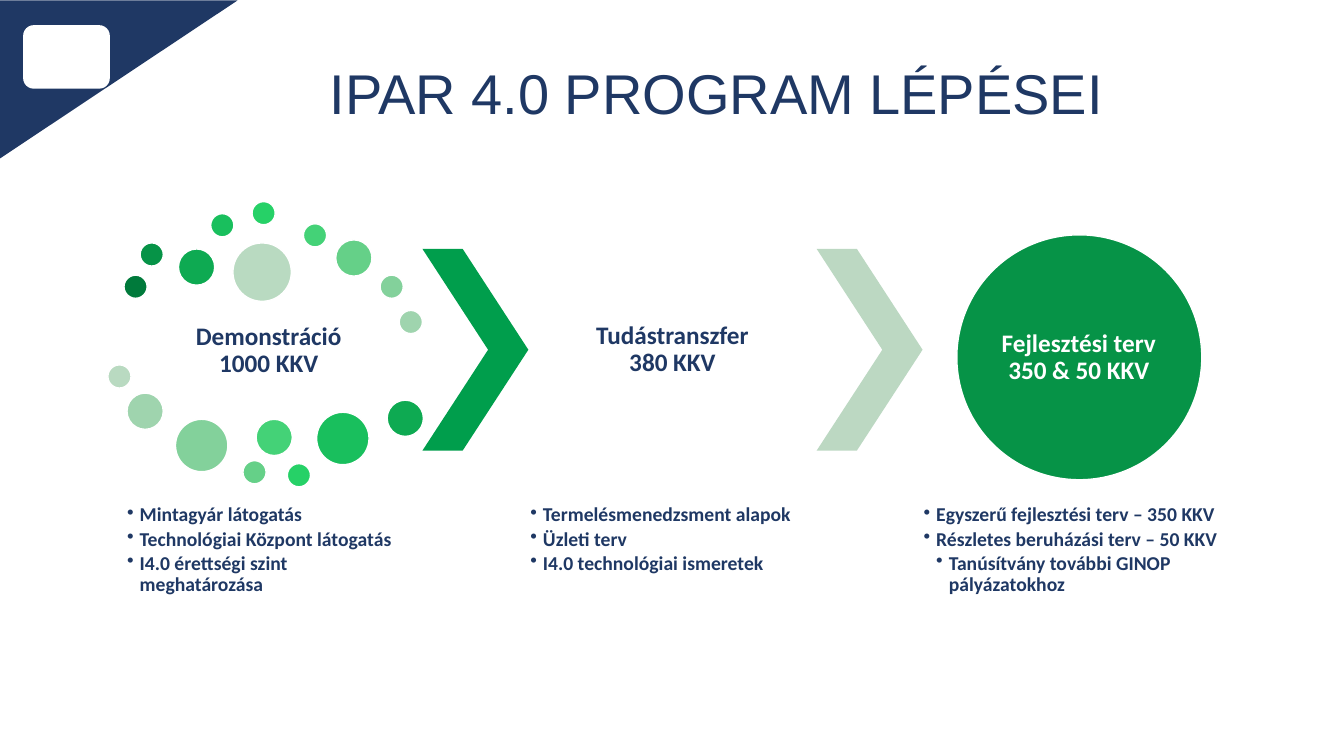
from lxml import etree
from pptx import Presentation
from pptx.dml.color import RGBColor
from pptx.enum.shapes import MSO_SHAPE
from pptx.enum.text import MSO_ANCHOR, PP_ALIGN
from pptx.oxml.ns import qn
from pptx.util import Pt

PX = 9144
WIDE, HIGH = 1333, 750
NAVY = RGBColor(0x1F, 0x38, 0x64)
WHITE = RGBColor(0xFF, 0xFF, 0xFF)
LEAF = RGBColor(0x00, 0x9E, 0x4C)
SAGE = RGBColor(0xBC, 0xD8, 0xC2)
DISC = RGBColor(0x06, 0x93, 0x47)
GREENS = [RGBColor.from_string(code) for code in (
    "007A3B", "069347", "0EAA52", "19BF5D", "26D167",
    "44D277", "65D088", "83D19B", "9FD4AE", "B9DAC1")]

OVAL, CHEVRON = MSO_SHAPE.OVAL, MSO_SHAPE.CHEVRON
CORNER, BADGE = MSO_SHAPE.RIGHT_TRIANGLE, MSO_SHAPE.ROUNDED_RECTANGLE
TOP, MIDDLE = MSO_ANCHOR.TOP, MSO_ANCHOR.MIDDLE
LEFT, CENTER = PP_ALIGN.LEFT, PP_ALIGN.CENTER

TITLE = {"name": "Arial", "size": Pt(40), "bold": False}
HEAD = {"name": "Calibri", "size": Pt(18), "bold": True}
ITEM = {"name": "Calibri", "size": Pt(14), "bold": True}

UPPER = [(123, 273, 23), (139, 241, 23), (177, 247, 36), (209, 212, 23),
         (250, 200, 23), (301, 222, 23), (333, 238, 36), (377, 273, 23),
         (396, 308, 23), (231, 241, 58)]
LOWER = [(107, 362, 23), (126, 390, 36), (174, 416, 52), (241, 457, 23),
         (254, 416, 36), (285, 460, 23), (314, 409, 52), (384, 397, 36)]

LABELS = [
    ((124, 301, 285, 94), "Demonstráció\n1000 KKV", NAVY, 3),
    ((524, 247, 286, 200), "Tudástranszfer\n380 KKV", NAVY, 3),
    ((984, 269, 172, 172), "Fejlesztési terv\n350 & 50 KKV", WHITE, 0),
]
LISTS = [
    (124, 285, [(1, "Mintagyár látogatás"),
                (1, "Technológiai Központ látogatás"),
                (1, "I4.0 érettségi szint meghatározása")]),
    (524, 286, [(1, "Termelésmenedzsment alapok"),
                (1, "Üzleti terv"),
                (1, "I4.0 technológiai ismeretek")]),
    (914, 312, [(1, "Egyszerű fejlesztési terv – 350 KKV"),
                (1, "Részletes beruházási terv – 50 KKV"),
                (2, "Tanúsítvány további GINOP pályázatokhoz")]),
]


class Canvas:
    def __init__(self, slide):
        self.shapes = slide.shapes

    def scale(self, box):
        return [side * PX for side in box]

    def shape(self, kind, box, fill, edge=None, turn=0, bend=None):
        shape = self.shapes.add_shape(kind, *self.scale(box))
        shape.shadow.inherit = False
        shape.rotation = turn
        shape.fill.solid()
        shape.fill.fore_color.rgb = fill
        if edge is None:
            shape.line.fill.background()
        else:
            shape.line.color.rgb = edge
            shape.line.width = Pt(1)
        if bend is not None:
            shape.adjustments[0] = bend

    def dot(self, x, y, size, fill):
        self.shape(OVAL, (x, y, size, size), fill, WHITE)

    def frame(self, box, inset, anchor):
        frame = self.shapes.add_textbox(*self.scale(box)).text_frame
        style = {"word_wrap": True, "vertical_anchor": anchor}
        for side in ("left", "right", "top", "bottom"):
            style[f"margin_{side}"] = inset * PX
        for key, value in style.items():
            setattr(frame, key, value)
        return frame

    def letter(self, para, text, style, color, align):
        para.text = text
        para.alignment = align
        para.line_spacing = 0.9
        for run in para.runs:
            for key, value in style.items():
                setattr(run.font, key, value)
            run.font.color.rgb = color

    def label(self, box, text, style, color, inset):
        frame = self.frame(box, inset, MIDDLE)
        self.letter(frame.paragraphs[0], text, style, color, CENTER)

    def bullets(self, box, items):
        frame = self.frame(box, 2, TOP)
        for index, (level, text) in enumerate(items):
            para = frame.add_paragraph() if index else frame.paragraphs[0]
            para.level = level
            props = para._p.get_or_add_pPr()
            props.set("marL", str(level * 25 * PX // 2))
            props.set("indent", str(-25 * PX // 2))
            etree.SubElement(props, qn("a:buChar")).set("char", "•")
            self.letter(para, text, ITEM, NAVY, LEFT)
            para.space_after = Pt(2.1)


def main():
    deck = Presentation()
    deck.slide_width, deck.slide_height = WIDE * PX, HIGH * PX
    page = Canvas(deck.slides.add_slide(deck.slide_layouts[6]))

    page.shape(CORNER, (39, -39, 157, 236), NAVY, turn=90)
    page.shape(BADGE, (23, 25, 86, 63), WHITE)
    page.label((179, 29, 1063, 134), "IPAR 4.0 PROGRAM LÉPÉSEI", TITLE, NAVY, 5)

    for spots, shades in ((UPPER, GREENS), (LOWER, GREENS[:1:-1])):
        for spot, shade in zip(spots, shades):
            page.dot(*spot, shade)
    for x, shade in ((419, LEAF), (810, SAGE)):
        page.shape(CHEVRON, (x, 247, 105, 200), shade, bend=0.62)
    page.dot(949, 233, 243, DISC)

    for box, text, color, inset in LABELS:
        page.label(box, text, HEAD, color, inset)
    for x, width, items in LISTS:
        page.bullets((x, 499, width, 176), items)

    deck.save("out.pptx")


if __name__ == "__main__":
    main()
